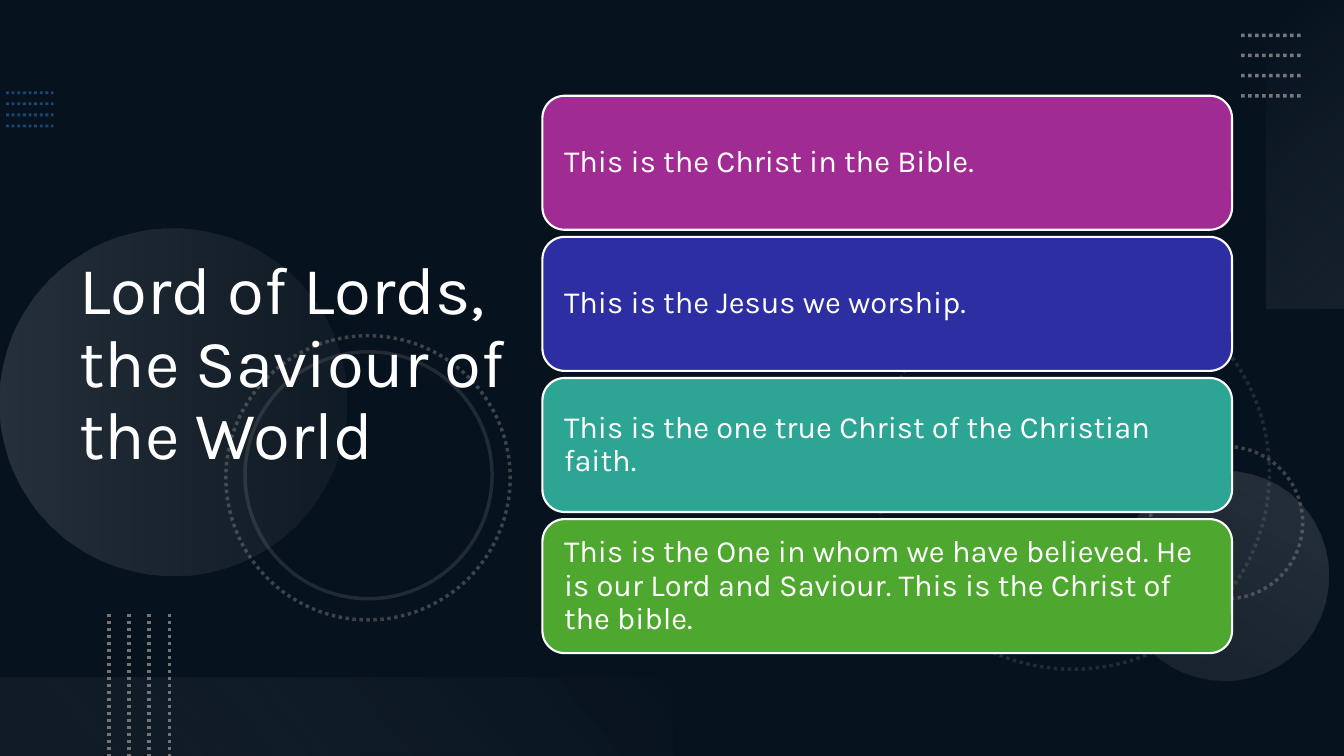
from dataclasses import dataclass
from typing import Any, Optional

from pptx import Presentation
from pptx.dml.color import RGBColor
from pptx.enum.dml import MSO_LINE
from pptx.enum.shapes import MSO_CONNECTOR as Link, MSO_SHAPE as Shape
from pptx.enum.text import MSO_ANCHOR as Anchor, PP_ALIGN as Align
from pptx.oxml.ns import qn
from pptx.util import Emu, Pt
from lxml.etree import SubElement

FONT = "Karla"
WHITE = "FFFFFF"


@dataclass
class Stroke:
    color: str
    width: float
    alpha: int = 100
    dotted: bool = True


@dataclass
class Stop:
    position: float
    color: str
    alpha: int


@dataclass
class Ring:
    x: int
    y: int
    size: int
    stroke: Stroke


@dataclass
class Glow:
    kind: Any
    x: int
    y: int
    w: int
    h: int
    rotation: int
    angle: int
    stops: tuple[Stop, Stop]


@dataclass
class DotLines:
    x: int
    y: int
    w: int
    h: int
    step_x: int
    step_y: int
    stroke: Stroke


@dataclass
class Card:
    color: str
    text: str


RINGS = [
    Ring(869, 274, 390, Stroke("747474", 2.5, 25)),
    Ring(1141, 443, 151, Stroke("747474", 2.5, 50)),
    Ring(224, 333, 282, Stroke("747474", 2.5, 50)),
    Ring(243, 349, 245, Stroke("747474", 2.5, 25, False)),
]
DISCS = [
    Glow(Shape.OVAL, 0, 227, 344, 344, 270, 90,
         (Stop(0, "AEAEAE", 20), Stop(1, "747474", 10))),
    Glow(Shape.OVAL, 1110, 467, 208, 208, 210, 90,
         (Stop(0, "AEAEAE", 10), Stop(1, "AEAEAE", 20))),
]
BARS = [
    Glow(Shape.RECTANGLE, 1142, 114, 306, 78, 270, 140,
         (Stop(0, "F6F6F6", 0), Stop(1, "AEAEAE", 10))),
    Glow(Shape.RECTANGLE, 0, 672, 667, 78, 180, 140,
         (Stop(0.1, "747474", 10), Stop(1, "F1F1F1", 0))),
]
DOT_LINES = [
    DotLines(6, 92, 47, 0, 0, 11, Stroke("2D7FCF", 2, 50)),
    DotLines(1231, 35, 60, 0, 0, 20, Stroke("AEAEAE", 2.5, 65)),
    DotLines(108, 609, 0, 141, 20, 0, Stroke("747474", 2.5)),
]
CARDS = [
    Card("A02B93", "This is the Christ in the Bible."),
    Card("2C2EA2", "This is the Jesus we worship."),
    Card("2DA594", "This is the one true Christ of the Christian faith."),
    Card("4EA72E", "This is the One in whom we have believed. He is our Lord "
                   "and Saviour. This is the Christ of the bible."),
]


def px(n: int) -> Emu:
    """Convert px, at 100 to the inch, into EMU."""
    return Emu(n * 9144)


def rgb(color: str) -> RGBColor:
    """Return the colour for a hex string."""
    return RGBColor.from_string(color)


def set_alpha(color_element: Any, alpha: int) -> None:
    """Give a colour element an opacity in percent."""
    if alpha < 100:
        SubElement(color_element, qn("a:alpha"), val=str(alpha * 1000))


def set_stroke(s: Any, stroke: Stroke) -> None:
    """Style the line of a shape or connector."""
    s.line.color.rgb = rgb(stroke.color)
    s.line.width = Pt(stroke.width)
    if stroke.dotted:
        s.line.dash_style = MSO_LINE.ROUND_DOT
    set_alpha(s.element.xpath("./p:spPr/a:ln//a:srgbClr")[0], stroke.alpha)


def add_shape(slide: Any, kind: Any, x: int, y: int, w: int, h: int,
              color: Optional[str] = None, alpha: int = 100) -> Any:
    """Add a shape without shadow or line, filled if a colour is given."""
    s = slide.shapes.add_shape(kind, px(x), px(y), px(w), px(h))
    s.shadow.inherit = False
    s.line.fill.background()
    if color is None:
        s.fill.background()
    else:
        s.fill.solid()
        s.fill.fore_color.rgb = rgb(color)
        set_alpha(s.element.xpath("./p:spPr/a:solidFill/a:srgbClr")[0], alpha)
    return s


def add_ring(slide: Any, ring: Ring) -> None:
    """Add an unfilled circle."""
    s = add_shape(slide, Shape.OVAL, ring.x, ring.y, ring.size, ring.size)
    s.rotation = 75
    set_stroke(s, ring.stroke)


def add_glow(slide: Any, glow: Glow) -> None:
    """Add a shape with a translucent gradient."""
    s = add_shape(slide, glow.kind, glow.x, glow.y, glow.w, glow.h)
    s.rotation = glow.rotation
    s.fill.gradient()
    s.fill.gradient_angle = 360 - glow.angle
    for target, stop in zip(s.fill.gradient_stops, glow.stops):
        target.position = stop.position
        target.color.rgb = rgb(stop.color)
    colors = s.element.xpath("./p:spPr/a:gradFill//a:srgbClr")
    for element, stop in zip(colors, glow.stops):
        set_alpha(element, stop.alpha)


def add_dot_lines(slide: Any, dots: DotLines) -> None:
    """Add four evenly spaced dotted lines."""
    for i in range(4):
        x, y = dots.x + i * dots.step_x, dots.y + i * dots.step_y
        s = slide.shapes.add_connector(
            Link.STRAIGHT, px(x), px(y), px(x + dots.w), px(y + dots.h))
        set_stroke(s, dots.stroke)
        SubElement(s.element.spPr, qn("a:effectLst"))


def set_text(s: Any, text: str, size: int, inset: int) -> None:
    """Write white, left-aligned, vertically centred text."""
    tf = s.text_frame
    tf.text = text
    tf.word_wrap = True
    tf.vertical_anchor = Anchor.MIDDLE
    tf.margin_left = tf.margin_right = px(inset)
    p = tf.paragraphs[0]
    p.alignment = Align.LEFT
    p.line_spacing = 0.9
    r = p.runs[0]
    r.font.name = FONT
    r.font.size = Pt(size)
    r.font.color.rgb = rgb(WHITE)


def main() -> None:
    """Build the slide and save it."""
    prs = Presentation()
    prs.slide_width, prs.slide_height = px(1333), px(750)
    slide = prs.slides.add_slide(prs.slide_layouts[6])
    slide.background.fill.solid()
    slide.background.fill.fore_color.rgb = rgb("0E2841")
    add_shape(slide, Shape.RECTANGLE, 0, 0, 1333, 750, "000000", 53)
    for ring in RINGS:
        add_ring(slide, ring)
    for glow in DISCS + BARS:
        add_glow(slide, glow)
    for dots in DOT_LINES:
        add_dot_lines(slide, dots)
    title = slide.shapes.add_textbox(px(69), px(54), px(459), px(617))
    set_text(title, "Lord of Lords, the Saviour of the World", 48, 10)
    for i, card in enumerate(CARDS):
        s = add_shape(slide, Shape.ROUNDED_RECTANGLE, 538, 95 + i * 140, 684, 133, card.color)
        set_stroke(s, Stroke(WHITE, 1.5, dotted=False))
        set_text(s, card.text, 22, 15)
    prs.save("out.pptx")


if __name__ == "__main__":
    main()
